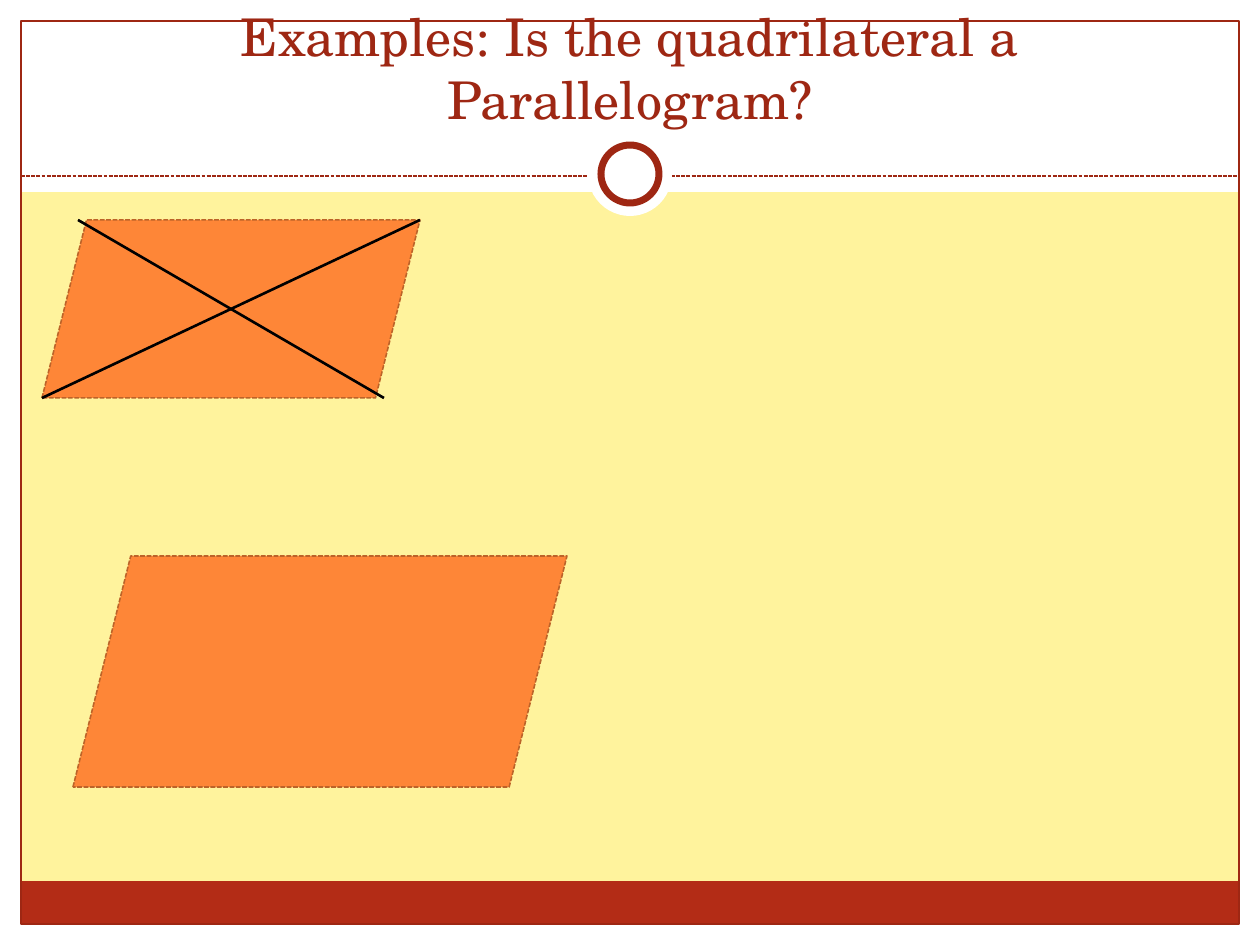
from typing import NamedTuple, Optional

from lxml.etree import SubElement
from pptx import Presentation
from pptx.dml.color import RGBColor
from pptx.enum.dml import MSO_LINE
from pptx.enum.shapes import MSO_CONNECTOR, MSO_SHAPE as Preset
from pptx.enum.text import MSO_ANCHOR as Anchor, PP_ALIGN as Align
from pptx.oxml.ns import qn
from pptx.util import Pt

EMU_PER_PX = 914400 / 126
WIDTH, HEIGHT = 1260, 945
MARGIN = 21
HEADER = 192
RULE_Y = 176
FONT = "TeX Gyre Schola"
COLORS = {
    "background": "FFF39D",
    "white": "FFFFFF",
    "footer": "B32C16",
    "accent": "9E2713",
    "orange": "FE8637",
    "outline": "BC6329",
    "black": "000000",
}


class Stroke(NamedTuple):
    color: str
    points: float
    dashed: bool = False


class Block(NamedTuple):
    left: int
    top: int
    width: int
    height: int
    fill: Optional[str] = None
    stroke: Optional[Stroke] = None
    preset: Preset = Preset.RECTANGLE


class Segment(NamedTuple):
    x1: int
    y1: int
    x2: int
    y2: int
    stroke: Stroke


def px(length: int) -> int:
    return round(length * EMU_PER_PX)


def rgb(name: str) -> RGBColor:
    return RGBColor.from_string(COLORS[name])


def style_line(line, stroke: Stroke) -> None:
    line.color.rgb = rgb(stroke.color)
    line.width = Pt(stroke.points)
    if stroke.dashed:
        line.dash_style = MSO_LINE.SQUARE_DOT


def draw_block(shapes, block: Block) -> None:
    shape = shapes.add_shape(block.preset, *map(px, block[:4]))
    shape.shadow.inherit = False
    if block.fill:
        shape.fill.solid()
        shape.fill.fore_color.rgb = rgb(block.fill)
    else:
        shape.fill.background()
    if block.stroke:
        style_line(shape.line, block.stroke)
    else:
        shape.line.fill.background()


def draw_segment(shapes, segment: Segment) -> None:
    connector = shapes.add_connector(MSO_CONNECTOR.STRAIGHT, *map(px, segment[:4]))
    style_line(connector.line, segment.stroke)
    SubElement(connector._element.spPr, qn("a:effectLst"))


def draw_text(shapes, text: str, *, left: int, top: int, width: int, height: int,
              size: float, color: str, align: Align, anchor: Anchor) -> None:
    box = shapes.add_textbox(*map(px, (left, top, width, height)))
    frame = box.text_frame
    frame.word_wrap = True
    frame.vertical_anchor = anchor
    paragraph = frame.paragraphs[0]
    paragraph.alignment = align
    run = paragraph.add_run()
    run.text = text
    run.font.name = FONT
    run.font.size = Pt(size)
    run.font.color.rgb = rgb(color)


def circle(diameter: int, stroke: Optional[Stroke] = None) -> Block:
    center_x, center_y = WIDTH // 2, 174
    return Block(center_x - diameter // 2, center_y - diameter // 2,
                 diameter, diameter, "white", stroke, Preset.OVAL)


def main() -> None:
    presentation = Presentation()
    presentation.slide_width, presentation.slide_height = px(WIDTH), px(HEIGHT)
    slide = presentation.slides.add_slide(presentation.slide_layouts[6])
    slide.background.fill.solid()
    slide.background.fill.fore_color.rgb = rgb("background")
    shapes = slide.shapes

    frame_stroke = Stroke("accent", 0.75)
    edge = Stroke("outline", 0.9, dashed=True)
    diagonal = Stroke("black", 1.5)
    inner_width = WIDTH - 2 * MARGIN

    parts = [
        # White border, footer band and frame
        Block(0, HEIGHT - MARGIN, WIDTH, MARGIN, "white"),
        Block(0, 0, WIDTH, HEADER, "white"),
        Block(0, 0, MARGIN, HEIGHT, "white"),
        Block(WIDTH - MARGIN, 0, MARGIN, HEIGHT, "white"),
        Block(MARGIN, 881, inner_width, 43, "footer"),
        Block(MARGIN, MARGIN, inner_width, HEIGHT - 2 * MARGIN, stroke=frame_stroke),
        # Header rule and ring
        Segment(MARGIN, RULE_Y, WIDTH - MARGIN, RULE_Y, Stroke("accent", 0.75, dashed=True)),
        circle(84),
        circle(58, Stroke("accent", 4)),
        # Parallelogram with diagonals
        Block(42, 220, 378, 178, "orange", edge, Preset.PARALLELOGRAM),
        Segment(42, 398, 420, 220, diagonal),
        Segment(78, 220, 384, 398, diagonal),
        # Plain parallelogram
        Block(73, 556, 494, 231, "orange", edge, Preset.PARALLELOGRAM),
    ]
    for part in parts:
        if isinstance(part, Block):
            draw_block(shapes, part)
        else:
            draw_segment(shapes, part)

    # Title
    draw_text(shapes, "Examples: Is the quadrilateral a Parallelogram?",
              left=42, top=32, width=1176, height=104, size=29.7,
              color="accent", align=Align.CENTER, anchor=Anchor.BOTTOM)

    presentation.save("out.pptx")


if __name__ == "__main__":
    main()
